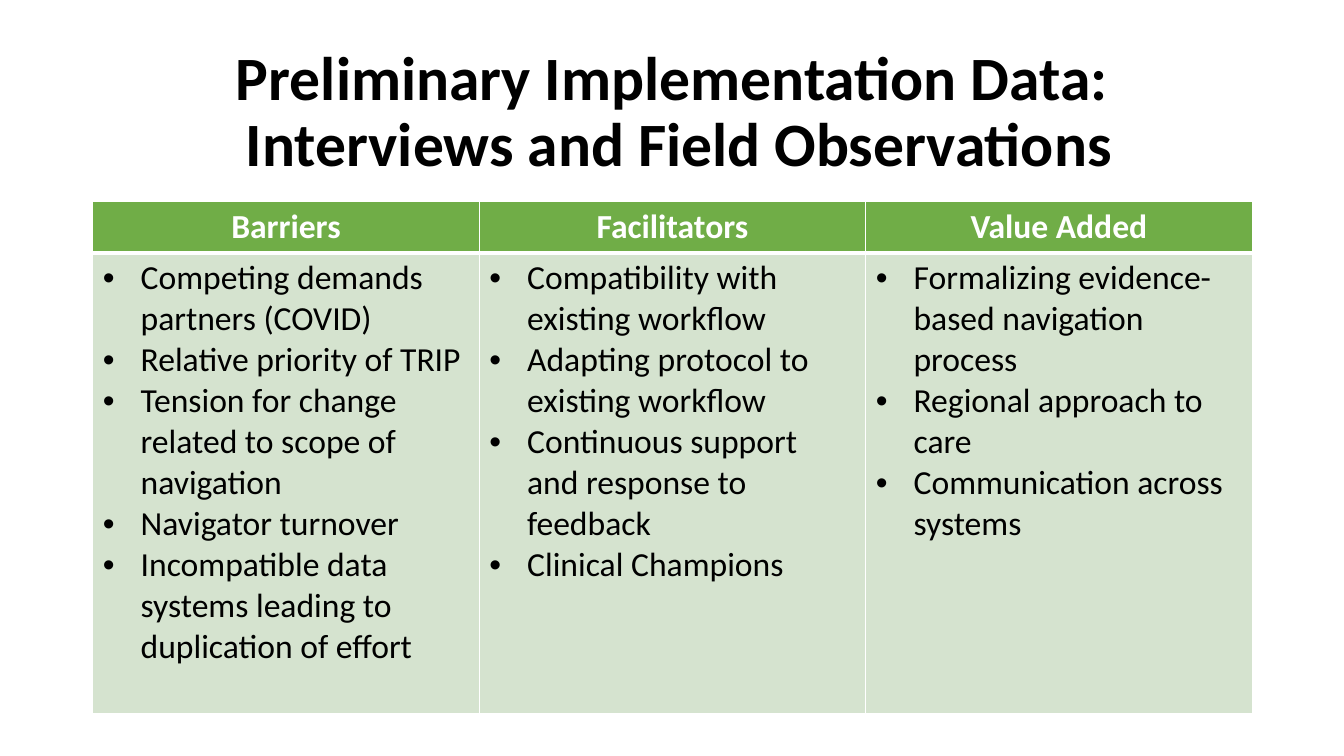
import pptx
import pptx.dml.color
import pptx.enum.text
import pptx.oxml.ns
import pptx.util
from lxml import etree

Inches = pptx.util.Inches
Pt = pptx.util.Pt
RGBColor = pptx.dml.color.RGBColor
PP_ALIGN = pptx.enum.text.PP_ALIGN
MSO_ANCHOR = pptx.enum.text.MSO_ANCHOR
qn = pptx.oxml.ns.qn

BLACK = RGBColor(0x00, 0x00, 0x00)
WHITE = RGBColor(0xFF, 0xFF, 0xFF)
GREEN = RGBColor(0x70, 0xAD, 0x47)
PALE_GREEN = RGBColor(0xD5, 0xE3, 0xCF)

TITLE = "Preliminary Implementation Data:\v Interviews and Field Observations"
FINDINGS = {
    "Barriers": [
        "Competing demands partners (COVID)",
        "Relative priority of TRIP",
        "Tension for change related to scope of navigation",
        "Navigator turnover",
        "Incompatible data systems leading to duplication of effort",
    ],
    "Facilitators": [
        "Compatibility with existing workflow",
        "Adapting protocol to existing workflow",
        "Continuous support and response to feedback",
        "Clinical Champions",
    ],
    "Value Added": [
        "Formalizing evidence-based navigation process",
        "Regional approach to care",
        "Communication across systems",
    ],
}


def write_text(p, text, size=24, color=BLACK, bold=False, font="Calibri",
               align=PP_ALIGN.LEFT, spacing=1.0, bullet=False):
    p.text = text
    p.alignment = align
    p.line_spacing = spacing
    for r in p.runs:
        r.font.name = font
        r.font.size = Pt(size)
        r.font.bold = bold
        r.font.color.rgb = color
    if bullet:
        pPr = p._p.get_or_add_pPr()
        indent = Inches(0.375)
        pPr.set("marL", str(indent))
        pPr.set("indent", str(-indent))
        etree.SubElement(pPr, qn("a:buFont"), typeface="Arial")
        etree.SubElement(pPr, qn("a:buChar"), char="•")


class SlideBuilder:
    def __init__(self, slide):
        self.slide = slide

    def title(self, text, left, top, width, height):
        sp = self.slide.shapes.title
        sp.left, sp.top = Inches(left), Inches(top)
        sp.width, sp.height = Inches(width), Inches(height)
        tf = sp.text_frame
        tf.word_wrap = True
        tf.auto_size = pptx.enum.text.MSO_AUTO_SIZE.NONE
        tf.vertical_anchor = MSO_ANCHOR.MIDDLE
        write_text(tf.paragraphs[0], text, size=44, bold=True,
                   align=PP_ALIGN.CENTER, spacing=0.9)

    def cell(self, cell, lines, fill, top=1, bottom=1, **style):
        cell.fill.solid()
        cell.fill.fore_color.rgb = fill
        self.borders(cell, L=1, R=1, T=top, B=bottom)
        tf = cell.text_frame
        for i, line in enumerate(lines):
            p = tf.add_paragraph() if i else tf.paragraphs[0]
            write_text(p, line, **style)

    def borders(self, cell, **widths):
        tcPr = cell._tc.get_or_add_tcPr()
        for i, (side, width) in enumerate(widths.items()):
            ln = etree.Element(qn(f"a:ln{side}"), w=str(Pt(width)))
            fill = etree.SubElement(ln, qn("a:solidFill"))
            etree.SubElement(fill, qn("a:srgbClr"), val=str(WHITE))
            tcPr.insert(i, ln)

    def table(self, columns, left, top, width, row_heights):
        table = self.slide.shapes.add_table(
            len(row_heights), len(columns), Inches(left), Inches(top),
            Inches(width), Inches(sum(row_heights))).table
        for row, height in zip(table.rows, row_heights):
            row.height = Inches(height)
        for i, (heading, points) in enumerate(columns.items()):
            self.cell(table.cell(0, i), [heading], GREEN, bottom=3,
                      color=WHITE, bold=True, align=PP_ALIGN.CENTER)
            self.cell(table.cell(1, i), points, PALE_GREEN, top=3, bullet=True)


def main():
    prs = pptx.Presentation()
    prs.slide_width = Inches(13.33)
    prs.slide_height = Inches(7.5)
    builder = SlideBuilder(prs.slides.add_slide(prs.slide_layouts[5]))
    builder.title(TITLE, 0.92, 0.4, 11.5, 1.45)
    builder.table(FINDINGS, 0.92, 2, 11.5, [0.5, 4.57])
    prs.save("out.pptx")


if __name__ == "__main__":
    main()
